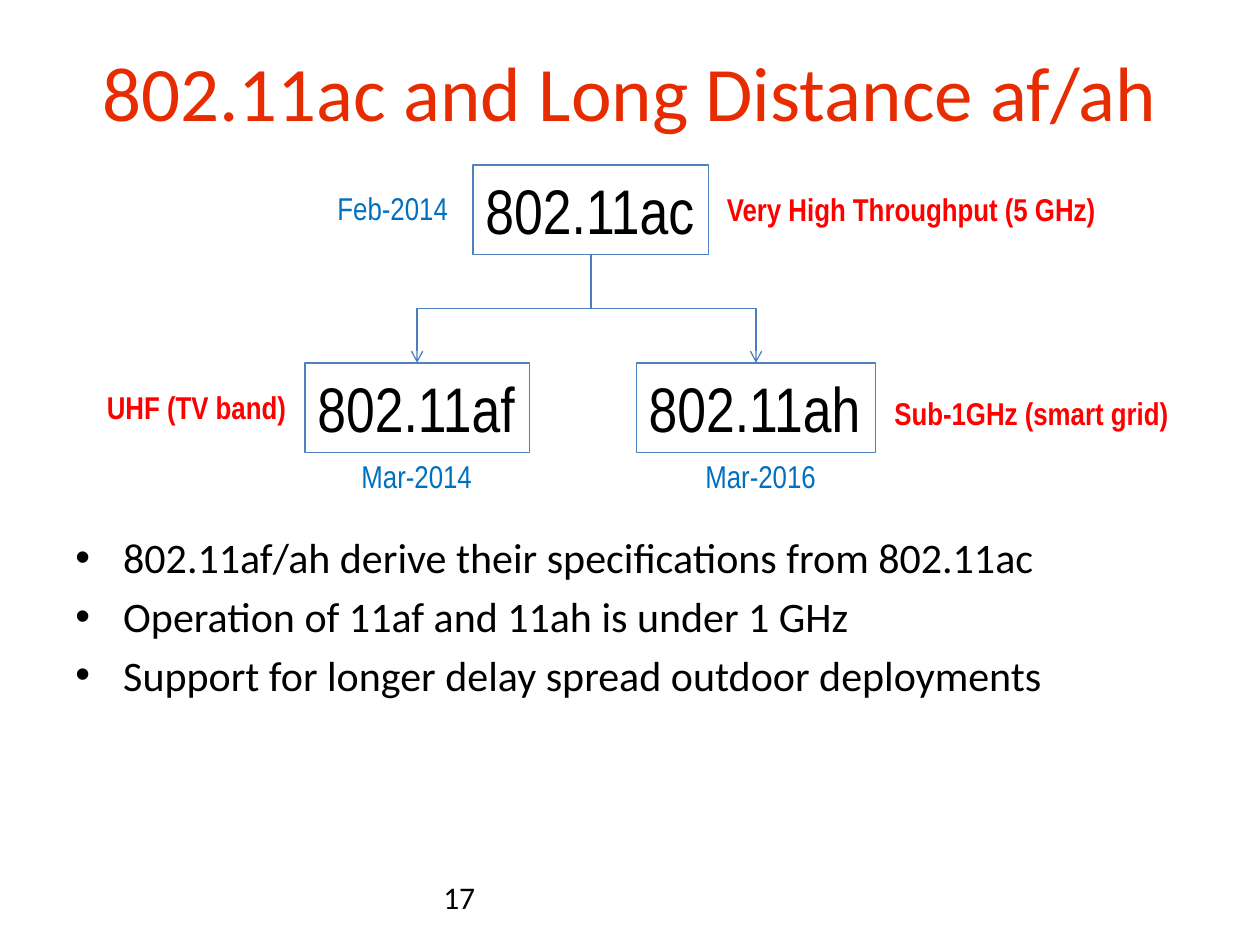
from dataclasses import dataclass

from lxml import etree
from pptx import Presentation
from pptx import util as u
from pptx.dml.color import RGBColor
from pptx.enum import shapes, text
from pptx.oxml.ns import qn

COLS, ROWS = 100, 75
WIDTH, HEIGHT = u.Inches(10), u.Inches(7.5)

ORANGE = RGBColor(0xE6, 0x2C, 0x00)
BLACK = RGBColor(0x00, 0x00, 0x00)
RED = RGBColor(0xFF, 0x00, 0x00)
BLUE = RGBColor(0x00, 0x70, 0xC0)
BOX_LINE = RGBColor(0x4F, 0x81, 0xBD)
ARROW_LINE = RGBColor(0x4B, 0x7E, 0xBC)

BODY_FONT, DIAGRAM_FONT = "Calibri", "Arial Narrow"
BOX_ROWS, LABEL_ROWS = 7.1, 4


@dataclass(frozen=True)
class Standard:
    name: str
    center: float
    top: float
    width: float


@dataclass(frozen=True)
class Label:
    text: str
    left: float
    top: float
    width: float
    color: RGBColor
    bold: bool = False


AC = Standard("802.11ac", 46.9, 13.1, 18.7)
AF = Standard("802.11af", 33.1, 28.8, 17.8)
AH = Standard("802.11ah", 60, 28.8, 19)

LABELS = [
    Label("Sub-1GHz (smart grid)", 70, 30.8, 24, RED, True),
    Label("UHF (TV band)", 7.5, 30.3, 16.4, RED, True),
    Label("Very High Throughput (5 GHz)", 56.7, 14.6, 31.6, RED, True),
    Label("Mar-2016", 55, 35.8, 10.9, BLUE),
    Label("Mar-2014", 27.7, 35.8, 10.9, BLUE),
    Label("Feb-2014", 25.8, 14.5, 10.9, BLUE),
]

BULLETS = [
    "802.11af/ah derive their specifications from 802.11ac",
    "Operation of 11af and 11ah is under 1 GHz",
    "Support for longer delay spread outdoor deployments",
]


def area(left: float, top: float, width: float, height: float) -> tuple:
    """Turn grid columns and rows into slide lengths."""
    return (int(WIDTH * left / COLS), int(HEIGHT * top / ROWS),
            int(WIDTH * width / COLS), int(HEIGHT * height / ROWS))


def format_runs(p, font: str, size: float, color: RGBColor, bold: bool = False) -> None:
    for r in p.runs:
        r.font.name, r.font.size, r.font.bold = font, u.Pt(size), bold
        r.font.color.rgb = color


def fit_to_line(tf) -> None:
    tf.word_wrap = False
    tf.auto_size = text.MSO_AUTO_SIZE.SHAPE_TO_FIT_TEXT


def add_title(slide, words: str) -> None:
    sp = slide.shapes.title
    sp.left, sp.top, sp.width, sp.height = area(5, 3, 90, 12.5)
    tf = sp.text_frame
    tf.text = words
    tf.vertical_anchor = text.MSO_ANCHOR.TOP
    p = tf.paragraphs[0]
    p.alignment = text.PP_ALIGN.CENTER
    format_runs(p, BODY_FONT, 44, ORANGE)


def add_bullets(slide, lines: list[str]) -> None:
    tf = slide.shapes.add_textbox(*area(5, 41.7, 90, 19.2)).text_frame
    tf.word_wrap = True
    tf.text = "\n".join(lines)
    for i, p in enumerate(tf.paragraphs):
        p.space_before = u.Pt(4.8 if i else 0)
        pPr = p._p.get_or_add_pPr()
        pPr.set("marL", str(u.Inches(0.38)))
        pPr.set("indent", str(u.Inches(-0.38)))
        etree.SubElement(pPr, qn("a:buFont"), typeface="Arial")
        etree.SubElement(pPr, qn("a:buChar"), char="•")
        format_runs(p, BODY_FONT, 24, BLACK)


def add_standard(slide, std: Standard) -> None:
    sp = slide.shapes.add_shape(
        shapes.MSO_SHAPE.RECTANGLE,
        *area(std.center - std.width / 2, std.top, std.width, BOX_ROWS))
    sp.shadow.inherit = False
    sp.fill.background()
    sp.line.color.rgb, sp.line.width = BOX_LINE, u.Pt(0.75)
    tf = sp.text_frame
    fit_to_line(tf)
    tf.text = std.name
    tf.vertical_anchor = text.MSO_ANCHOR.TOP
    p = tf.paragraphs[0]
    p.alignment = text.PP_ALIGN.LEFT
    format_runs(p, DIAGRAM_FONT, 36, BLACK)


def add_branch(slide, parent: Standard, child: Standard) -> None:
    """Draw a down-across-down arrow: a bent connector turned a quarter."""
    start = parent.top + BOX_ROWS
    drop, shift = child.top - start, child.center - parent.center
    span = abs(shift)
    mid_x, mid_y = parent.center + shift / 2, start + drop / 2
    left, top, width, height = area(mid_x - drop / 2, mid_y - span / 2, drop, span)
    cxn = slide.shapes.add_connector(
        shapes.MSO_CONNECTOR.ELBOW, left, top, left + width, top + height)
    cxn.line.color.rgb, cxn.line.width = ARROW_LINE, u.Pt(0.75)
    spPr = cxn._element.spPr
    xfrm = spPr.find(qn("a:xfrm"))
    xfrm.set("rot", str((270 if shift > 0 else 90) * 60000))
    if shift > 0:
        xfrm.set("flipH", "1")
    etree.SubElement(spPr.find(qn("a:ln")), qn("a:tailEnd"), type="arrow")
    etree.SubElement(spPr, qn("a:effectLst"))


def add_label(slide, label: Label) -> None:
    sp = slide.shapes.add_textbox(*area(label.left, label.top, label.width, LABEL_ROWS))
    tf = sp.text_frame
    fit_to_line(tf)
    tf.text = label.text
    format_runs(tf.paragraphs[0], DIAGRAM_FONT, 18, label.color, label.bold)


def add_page_number(slide, number: int) -> None:
    tf = slide.shapes.add_textbox(*area(34.2, 69.2, 23.3, LABEL_ROWS)).text_frame
    tf.word_wrap = True
    tf.text = str(number)
    format_runs(tf.paragraphs[0], BODY_FONT, 18, BLACK)


def main() -> None:
    prs = Presentation()
    prs.slide_width, prs.slide_height = WIDTH, HEIGHT
    slide = prs.slides.add_slide(prs.slide_layouts.get_by_name("Title Only"))
    add_title(slide, "802.11ac and Long Distance af/ah")
    add_bullets(slide, BULLETS)
    for std in (AC, AF, AH):
        add_standard(slide, std)
    for child in (AF, AH):
        add_branch(slide, AC, child)
    for label in LABELS:
        add_label(slide, label)
    add_page_number(slide, 17)
    prs.save("out.pptx")


if __name__ == "__main__":
    main()
